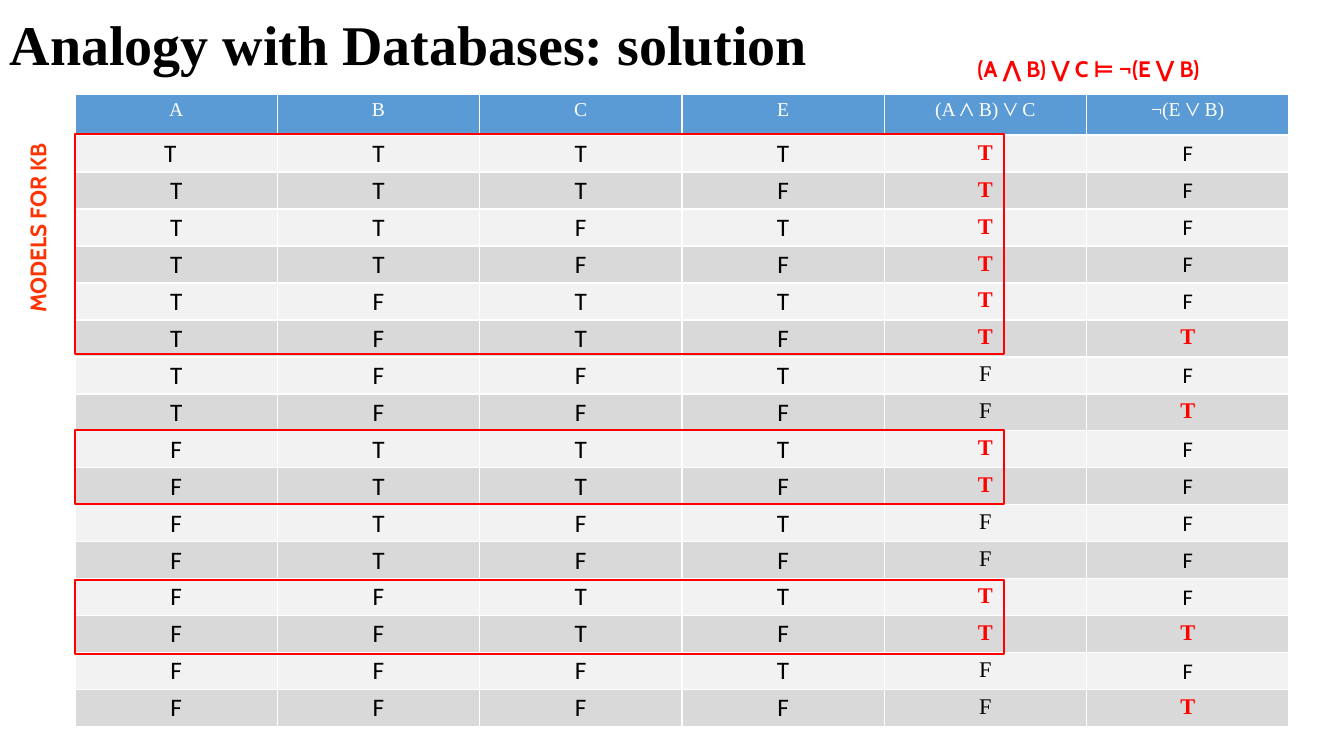
from itertools import product

from pptx import Presentation
from pptx.dml.color import RGBColor
from pptx.enum import shapes, text
from pptx.util import Pt

BLACK = RGBColor(0x00, 0x00, 0x00)
WHITE = RGBColor(0xFF, 0xFF, 0xFF)
RED = RGBColor(0xFF, 0x00, 0x00)
ORANGE_RED = RGBColor(0xFF, 0x33, 0x00)
HEADER_BLUE = RGBColor(0x5B, 0x9B, 0xD5)
BANDS = RGBColor(0xF2, 0xF2, 0xF2), RGBColor(0xD9, 0xD9, 0xD9)
SERIF, SANS, LABEL = "Times New Roman", "Calibri", "Cabin"

TITLE = "Analogy with Databases: solution"
SIDE_LABEL = "MODELS FOR KB"
ENTAILMENT = "(A ⋀ B) ⋁ C ⊨ ¬(E ⋁ B)"
HEADERS = ["A", "B", "C", "E", "(A ⋀ B) ⋁ C", "¬(E ⋁ B)"]
TRUTH_ROWS = [
    (a, b, c, e, (a and b) or c, not (e or b))
    for a, b, c, e in product([True, False], repeat=4)
]
VARIABLE_COUNT = 4

# All lengths are in px
SLIDE_SIZE = 1344, 756
TABLE_LEFT, TABLE_TOP, TABLE_WIDTH = 75, 94, 1214
HEADER_HEIGHT, ROW_HEIGHT = 41, 37
MODEL_WIDTH = 929
MODEL_BOXES = [(134, 220), (430, 74), (580, 74)]  # top, height
VARIABLE_MARGIN, FIRST_CELL_RIGHT_MARGIN = 3, 15


def px(length):
    return round(length * 914400 / 100.8)


def write(frame, words, align, **font_values):
    """Put one formatted line into a text frame and return its paragraph."""
    paragraph = frame.paragraphs[0]
    paragraph.alignment = align
    run = paragraph.add_run()
    run.text = words
    run.font.color.rgb = font_values.pop("color")
    for name, value in font_values.items():
        setattr(run.font, name, value)
    return paragraph


def add_label(slide, box, words, align, **font_values):
    shape = slide.shapes.add_textbox(*map(px, box))
    shape.text_frame.word_wrap = True
    write(shape.text_frame, words, align, **font_values)
    return shape


def fill_cell(cell, color):
    cell.fill.solid()
    cell.fill.fore_color.rgb = color


def result_format(column, value):
    """Font of a formula result: true values stand out in red."""
    if value:
        return dict(name=SERIF if column == VARIABLE_COUNT or value else SANS,
                    color=RED, bold=True)
    return dict(name=SERIF if column == VARIABLE_COUNT else SANS,
                color=BLACK, bold=False)


def add_truth_table(slide):
    row_count = len(TRUTH_ROWS)
    height = HEADER_HEIGHT + row_count * ROW_HEIGHT
    table = slide.shapes.add_table(
        row_count + 1, len(HEADERS),
        *map(px, (TABLE_LEFT, TABLE_TOP, TABLE_WIDTH, height))).table
    for index, row in enumerate(table.rows):
        row.height = px(ROW_HEIGHT if index else HEADER_HEIGHT)

    center = text.PP_ALIGN.CENTER
    for column, header in enumerate(HEADERS):
        cell = table.cell(0, column)
        fill_cell(cell, HEADER_BLUE)
        write(cell.text_frame, header, center,
              name=SERIF, size=Pt(14), color=WHITE, bold=False)

    for index, values in enumerate(TRUTH_ROWS):
        for column, value in enumerate(values):
            cell = table.cell(index + 1, column)
            fill_cell(cell, BANDS[index % 2])
            if column < VARIABLE_COUNT:
                cell.vertical_anchor = text.MSO_ANCHOR.MIDDLE
                for side in ("left", "right", "top", "bottom"):
                    setattr(cell, f"margin_{side}", px(VARIABLE_MARGIN))
                font_values = dict(name=SANS, size=Pt(18), color=BLACK, bold=False)
            else:
                font_values = dict(size=Pt(16), **result_format(column, value))
            write(cell.text_frame, "T" if value else "F", center, **font_values)
    table.cell(1, 0).margin_right = px(FIRST_CELL_RIGHT_MARGIN)


def add_model_box(slide, top, height):
    box = slide.shapes.add_shape(
        shapes.MSO_SHAPE.RECTANGLE,
        *map(px, (TABLE_LEFT, top, MODEL_WIDTH, height)))
    box.shadow.inherit = False
    box.fill.background()
    box.line.color.rgb = RED
    box.line.width = Pt(2)


def main():
    presentation = Presentation()
    presentation.slide_width, presentation.slide_height = map(px, SLIDE_SIZE)
    slide = presentation.slides.add_slide(presentation.slide_layouts[6])

    title = add_label(slide, (0, 0, 939, 83), TITLE, text.PP_ALIGN.LEFT,
                      name=SERIF, size=Pt(40), color=BLACK, bold=True)
    title.text_frame.vertical_anchor = text.MSO_ANCHOR.BOTTOM
    title.text_frame.paragraphs[0].line_spacing = 0.9

    add_truth_table(slide)
    for top, height in MODEL_BOXES:
        add_model_box(slide, top, height)

    side_label = add_label(slide, (-73, 226, 221, 37), SIDE_LABEL,
                           text.PP_ALIGN.RIGHT, name=LABEL, size=Pt(16),
                           color=ORANGE_RED, bold=True)
    side_label.rotation = 270
    entailment = add_label(slide, (958, 50, 271, 37), ENTAILMENT,
                           text.PP_ALIGN.CENTER, name=LABEL, size=Pt(16),
                           color=RED, bold=True)
    entailment.text_frame.margin_right = px(20)

    presentation.save("out.pptx")


if __name__ == "__main__":
    main()
